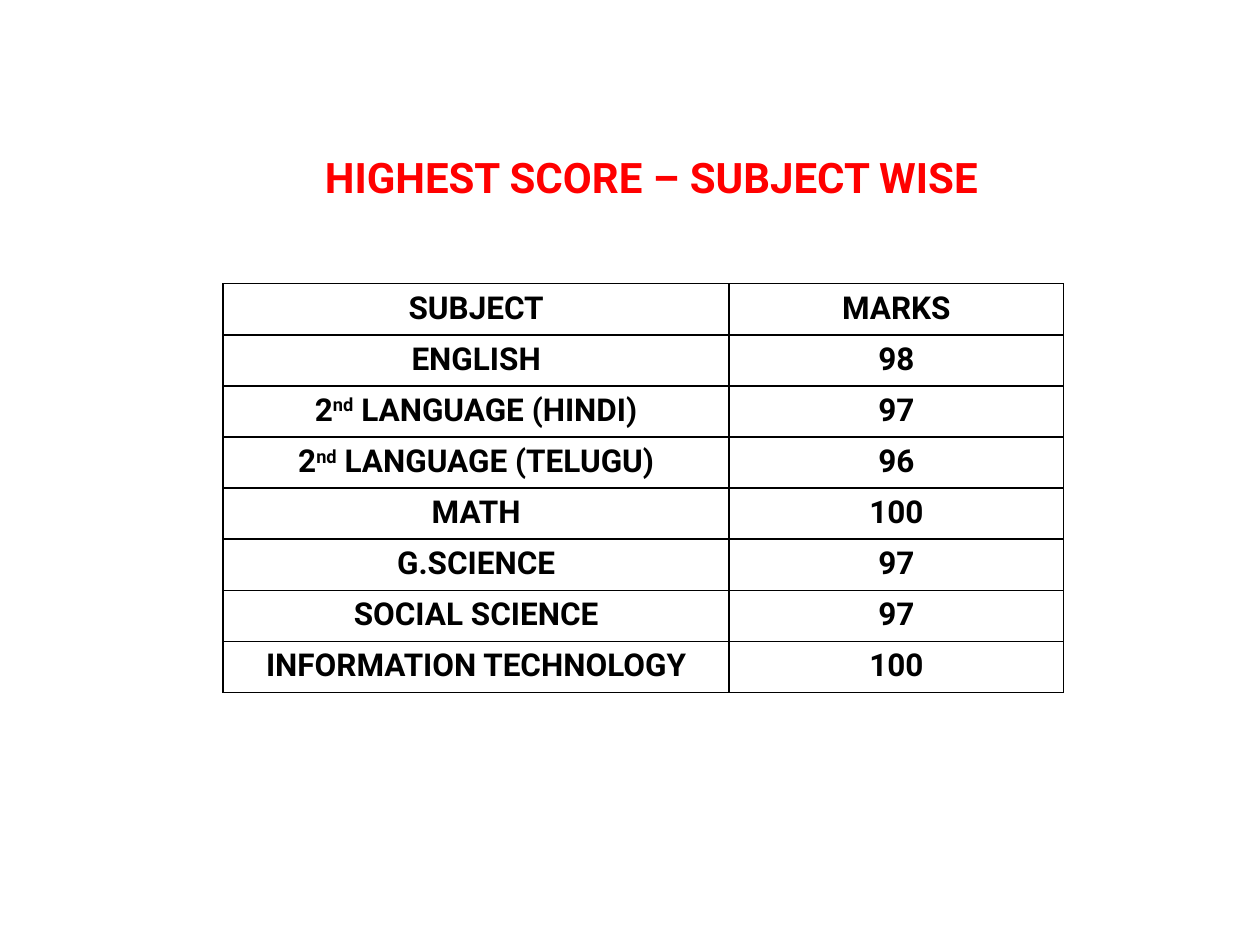
from dataclasses import dataclass

from lxml import etree
from pptx import Presentation
from pptx.dml.color import RGBColor
from pptx.enum.text import PP_ALIGN
from pptx.oxml.ns import qn
from pptx.util import Cm, Pt

CENTER = PP_ALIGN.CENTER


@dataclass(frozen=True)
class Theme:
    font: str = "Roboto"
    title_color: str = "FF0000"
    ink: str = "000000"
    title_size: int = 24
    table_size: int = 18
    border_width: int = 1


THEME = Theme()

# Text between carets is superscript.
SCORES = [
    ("SUBJECT", "MARKS"),
    ("ENGLISH", "98"),
    ("2^nd^ LANGUAGE (HINDI)", "97"),
    ("2^nd^ LANGUAGE (TELUGU)", "96"),
    ("MATH", "100"),
    ("G.SCIENCE", "97"),
    ("SOCIAL SCIENCE", "97"),
    ("INFORMATION TECHNOLOGY", "100"),
]
COLUMN_WIDTHS = [Cm(10.2), Cm(6.74)]
ROW_HEIGHT = Cm(1.03)


def style_run(run, size, color):
    run.font.name = THEME.font
    run.font.size = Pt(size)
    run.font.bold = True
    run.font.color.rgb = RGBColor.from_string(color)


def add_borders(cell):
    properties = cell._tc.get_or_add_tcPr()
    for side in ("a:lnL", "a:lnR", "a:lnT", "a:lnB"):
        line = etree.SubElement(properties, qn(side), w=str(Pt(THEME.border_width)))
        fill = etree.SubElement(line, qn("a:solidFill"))
        etree.SubElement(fill, qn("a:srgbClr"), val=THEME.ink)


prs = Presentation()
prs.slide_width, prs.slide_height = Cm(25.4), Cm(19.05)
slide = prs.slides.add_slide(prs.slide_layouts[6])

title = slide.shapes.add_textbox(Cm(6.3), Cm(2.92), Cm(16), Cm(1.28)).text_frame
title.word_wrap = True
title.text = "HIGHEST SCORE – SUBJECT WISE"
style_run(title.paragraphs[0].runs[0], THEME.title_size, THEME.title_color)

scores = slide.shapes.add_table(
    len(SCORES), len(COLUMN_WIDTHS), Cm(4.5), Cm(5.72),
    sum(COLUMN_WIDTHS), ROW_HEIGHT * len(SCORES),
).table
scores.first_row = False
scores.horz_banding = False
for column, width in zip(scores.columns, COLUMN_WIDTHS):
    column.width = width

for row, entries in enumerate(SCORES):
    scores.rows[row].height = ROW_HEIGHT
    for col, entry in enumerate(entries):
        cell = scores.cell(row, col)
        add_borders(cell)
        cell.fill.background()
        paragraph = cell.text_frame.paragraphs[0]
        paragraph.alignment = CENTER
        for index, part in enumerate(entry.split("^")):
            run = paragraph.add_run()
            run.text = part
            style_run(run, THEME.table_size, THEME.ink)
            if index % 2:
                run._r.get_or_add_rPr().set("baseline", "30000")

prs.save("out.pptx")
